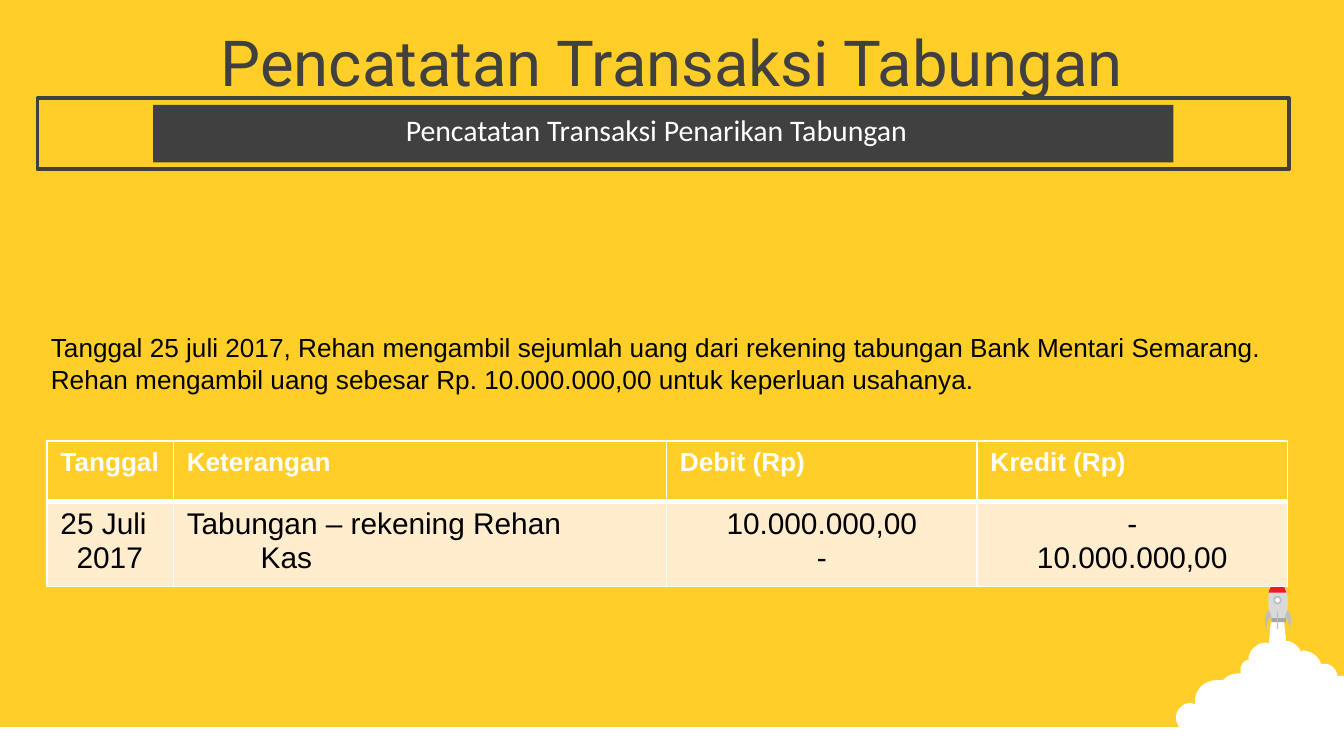
"""Build the slide on recording a savings withdrawal."""
from dataclasses import dataclass
from typing import NamedTuple

from lxml import etree
from pptx import Presentation
from pptx.dml.color import RGBColor
from pptx.enum import shapes, text
from pptx.oxml import ns
from pptx.util import Inches, Pt


@dataclass(frozen=True)
class Theme:
    """Colours, fonts and type sizes."""
    yellow: str = "FFCE29"
    dark: str = "404040"
    white: str = "FFFFFF"
    black: str = "000000"
    cream: str = "FFEDCD"
    hull: str = "D9D9D9"
    nozzle: str = "A6A6A6"
    fin: str = "BFBFBF"
    nose: str = "ED1C24"
    title_font: str = "Roboto"
    band_font: str = "Calibri"
    body_font: str = "Arial"
    title_size: int = 34
    large: int = 16
    small: int = 14


class Box(NamedTuple):
    """A place on the slide in inches."""
    left: float
    top: float
    width: float
    height: float


class Style(NamedTuple):
    """The look of a paragraph."""
    font: str
    size: int
    color: str
    bold: bool = False
    align: text.PP_ALIGN = text.PP_ALIGN.LEFT


class Line(NamedTuple):
    """A paragraph of a table cell, with indents in inches."""
    words: str
    align: text.PP_ALIGN = text.PP_ALIGN.LEFT
    margin: float = 0
    first: float = 0


class Outline(NamedTuple):
    """A closed path: pairs are corners, sextets are cubic curves."""
    color: str
    steps: list[tuple[float, ...]]


THEME = Theme()
CENTER = text.PP_ALIGN.CENTER
WIDTH = 10
HEIGHT = WIDTH * 9 / 16
GROUND = 5.41
BAND = Box(1.14, 0.78, 7.59, 0.43)
COLUMNS = [0.94, 3.67, 2.31, 2.31]
ROWS = [0.45, 0.63]
HEADINGS = ["Tanggal", "Keterangan", "Debit (Rp)", "Kredit (Rp)"]
AMOUNT, NONE = Line("10.000.000,00", CENTER), Line("-", CENTER)
ENTRY = [
    [Line("25 Juli\v2017", margin=0.12, first=-0.12)],
    [Line("Tabungan – rekening Rehan"), Line("Kas", margin=0.55)],
    [AMOUNT, NONE],
    [NONE, AMOUNT],
]
SMOKE = Outline(THEME.white, [
    (9.46, 4.59), (9.55, 4.59), (9.57, 4.77), (9.59, 4.77),
    (9.62, 4.78, 9.65, 4.8, 9.67, 4.83), (9.68, 4.85), (9.69, 4.84),
    (9.75, 4.84, 9.81, 4.88, 9.83, 4.94), (9.86, 4.94),
    (9.9, 4.94, 9.94, 4.97, 9.95, 5.02), (9.95, 5.03), (10, 5.03),
    (10, 5.6), (9.98, 5.6), (9.94, 5.6, 9.9, 5.59, 9.87, 5.57),
    (9.86, 5.56), (9.85, 5.57), (9.83, 5.58, 9.81, 5.59, 9.78, 5.59),
    (9.75, 5.59, 9.73, 5.57, 9.71, 5.55), (9.69, 5.54),
    (9.67, 5.58, 9.64, 5.59, 9.6, 5.59), (9.57, 5.59, 9.54, 5.58, 9.52, 5.56),
    (9.51, 5.55), (9.49, 5.56), (9.45, 5.59, 9.4, 5.61, 9.34, 5.61),
    (9.23, 5.61, 9.17, 5.56, 9.13, 5.51), (9.11, 5.53, 9.07, 5.54, 9.04, 5.53),
    (9, 5.52, 8.94, 5.5, 8.93, 5.45), (8.93, 5.43), (8.92, 5.44),
    (8.91, 5.45, 8.89, 5.45, 8.86, 5.45), (8.8, 5.45, 8.75, 5.4, 8.75, 5.34),
    (8.75, 5.28, 8.8, 5.23, 8.86, 5.23), (8.89, 5.24), (8.89, 5.22),
    (8.89, 5.13, 8.96, 5.06, 9.06, 5.06), (9.1, 5.06), (9.11, 5.05),
    (9.14, 5.02, 9.18, 5.01, 9.23, 5.01), (9.23, 4.98),
    (9.23, 4.95, 9.25, 4.92, 9.28, 4.91), (9.29, 4.91), (9.29, 4.89),
    (9.3, 4.83, 9.36, 4.78, 9.42, 4.78), (9.44, 4.79)])
HULL = Outline(THEME.hull, [(9.46, 4.62), (9.44, 4.53, 9.4, 4.4, 9.51, 4.31),
                            (9.62, 4.41, 9.58, 4.54, 9.56, 4.62)])
NOSE = Outline(THEME.nose, [(9.51, 4.31), (9.54, 4.34, 9.56, 4.37, 9.57, 4.41),
                            (9.44, 4.41), (9.45, 4.37, 9.47, 4.34, 9.51, 4.31)])
FINS = [
    Outline(THEME.fin, [(9.44, 4.54), (9.46, 4.59), (9.42, 4.61, 9.43, 4.66, 9.42, 4.68),
                        (9.41, 4.65, 9.4, 4.57, 9.44, 4.54)]),
    Outline(THEME.fin, [(9.58, 4.54), (9.56, 4.59), (9.59, 4.61, 9.59, 4.66, 9.6, 4.68),
                        (9.6, 4.65, 9.62, 4.57, 9.58, 4.54)]),
]


def inches(sides: tuple[float, ...]) -> list[Inches]:
    """Give the numbers as lengths."""
    return [Inches(side) for side in sides]


def paint(form, fill: str, line: str | None = None, weight: float = 1) -> None:
    """Set fill and line, and drop the shadow."""
    form.shadow.inherit = False
    form.fill.solid()
    form.fill.fore_color.rgb = RGBColor.from_string(fill)
    if line:
        form.line.color.rgb = RGBColor.from_string(line)
        form.line.width = Pt(weight)
    else:
        form.line.fill.background()


def add_form(slide, box: Box, fill: str, line: str | None = None, weight: float = 1,
             kind=shapes.MSO_SHAPE.RECTANGLE) -> None:
    """Add a preset shape."""
    paint(slide.shapes.add_shape(kind, *inches(box)), fill, line, weight)


def add_outline(slide, outline: Outline, pieces: int = 8) -> None:
    """Add a closed freeform with its curves cut into short lines."""
    points = [outline.steps[0]]
    for step in outline.steps[1:]:
        if len(step) == 2:
            points.append(step)
            continue
        knots = [points[-1], step[:2], step[2:4], step[4:]]
        for t in (piece / pieces for piece in range(1, pieces + 1)):
            weights = ((1 - t) ** 3, 3 * t * (1 - t) ** 2, 3 * t * t * (1 - t), t ** 3)
            points.append(tuple(sum(w * knot[axis] for w, knot in zip(weights, knots))
                                for axis in (0, 1)))
    corners = [inches(point) for point in points]
    builder = slide.shapes.build_freeform(*corners[0])
    builder.add_line_segments(corners[1:], close=True)
    paint(builder.convert_to_shape(), outline.color)


def write(paragraph, words: str, style: Style) -> None:
    """Fill a paragraph and set its look."""
    paragraph.text = words
    paragraph.alignment = style.align
    paragraph.font.name = style.font
    paragraph.font.size = Pt(style.size)
    paragraph.font.bold = style.bold
    paragraph.font.color.rgb = RGBColor.from_string(style.color)


def add_text(slide, box: Box, words: str, style: Style) -> None:
    """Add a wrapping text box."""
    frame = slide.shapes.add_textbox(*inches(box)).text_frame
    frame.word_wrap = True
    write(frame.paragraphs[0], words, style)


def fill_cell(cell, lines: list[Line], style: Style, fill: str, bottom: float) -> None:
    """Write a table cell with white borders."""
    properties = cell._tc.get_or_add_tcPr()
    for side, weight in (("L", 1), ("R", 1), ("T", 1), ("B", bottom)):
        border = etree.SubElement(properties, ns.qn(f"a:ln{side}"), w=str(Pt(weight)))
        solid = etree.SubElement(border, ns.qn("a:solidFill"))
        etree.SubElement(solid, ns.qn("a:srgbClr"), val=THEME.white)
    cell.fill.solid()
    cell.fill.fore_color.rgb = RGBColor.from_string(fill)
    frame = cell.text_frame
    for index, line in enumerate(lines):
        paragraph = frame.add_paragraph() if index else frame.paragraphs[0]
        write(paragraph, line.words, style._replace(align=line.align))
        indents = paragraph._p.get_or_add_pPr()
        indents.set("marL", str(Inches(line.margin)))
        indents.set("indent", str(Inches(line.first)))


def add_journal(slide) -> None:
    """Add the journal table."""
    box = Box(0.35, 3.28, sum(COLUMNS), sum(ROWS))
    journal = slide.shapes.add_table(len(ROWS), len(COLUMNS), *inches(box)).table
    for row, height in zip(journal.rows, ROWS):
        row.height = Inches(height)
    heading = Style(THEME.body_font, THEME.small, THEME.white, bold=True)
    entry = Style(THEME.body_font, THEME.large, THEME.black)
    for index, width in enumerate(COLUMNS):
        journal.columns[index].width = Inches(width)
        fill_cell(journal.cell(0, index), [Line(HEADINGS[index])], heading, THEME.yellow, 3)
        fill_cell(journal.cell(1, index), ENTRY[index], entry, THEME.cream, 1)


def add_rocket(slide) -> None:
    """Add the ground, the smoke and the rocket."""
    add_form(slide, Box(0, GROUND, WIDTH, HEIGHT - GROUND), THEME.white)
    add_outline(slide, SMOKE)
    add_outline(slide, HULL)
    add_form(slide, Box(9.46, 4.6, 0.11, 0.03), THEME.nozzle)
    add_outline(slide, NOSE)
    add_form(slide, Box(9.48, 4.44, 0.05, 0.05), THEME.white, THEME.fin,
             kind=shapes.MSO_SHAPE.OVAL)
    add_form(slide, Box(9.5, 4.55, 0.01, 0.13), THEME.fin)
    for fin in FINS:
        add_outline(slide, fin)


def place_title(slide) -> None:
    """Fill the title placeholder and bring it above the band."""
    title = slide.shapes.title
    title.left, title.top, title.width, title.height = inches(Box(0, 0.14, WIDTH, 0.63))
    title.text_frame.auto_size = text.MSO_AUTO_SIZE.NONE
    title.text_frame.vertical_anchor = text.MSO_ANCHOR.MIDDLE
    write(title.text_frame.paragraphs[0], "Pencatatan Transaksi Tabungan",
          Style(THEME.title_font, THEME.title_size, THEME.dark, align=CENTER))
    slide.shapes.element.append(title.element)


def main() -> None:
    """Build and save the slide."""
    deck = Presentation()
    deck.slide_width, deck.slide_height = Inches(WIDTH), Inches(HEIGHT)
    slide = deck.slides.add_slide(deck.slide_layouts[5])
    slide.background.fill.solid()
    slide.background.fill.fore_color.rgb = RGBColor.from_string(THEME.yellow)
    add_rocket(slide)
    add_form(slide, Box(0.28, 0.73, 9.31, 0.53), THEME.yellow, THEME.dark, 2)
    add_form(slide, BAND, THEME.dark)
    place_title(slide)
    add_text(slide, BAND._replace(width=7.49, height=0.37),
             "Pencatatan Transaksi Penarikan Tabungan",
             Style(THEME.band_font, THEME.large, THEME.white, align=CENTER))
    add_text(slide, Box(0.28, 2.42, 9.61, 0.57),
             "Tanggal 25 juli 2017, Rehan mengambil sejumlah uang dari rekening tabungan "
             "Bank Mentari Semarang.\vRehan mengambil uang sebesar Rp. 10.000.000,00 "
             "untuk keperluan usahanya.",
             Style(THEME.body_font, THEME.small, THEME.black))
    add_journal(slide)
    deck.save("out.pptx")


if __name__ == "__main__":
    main()
